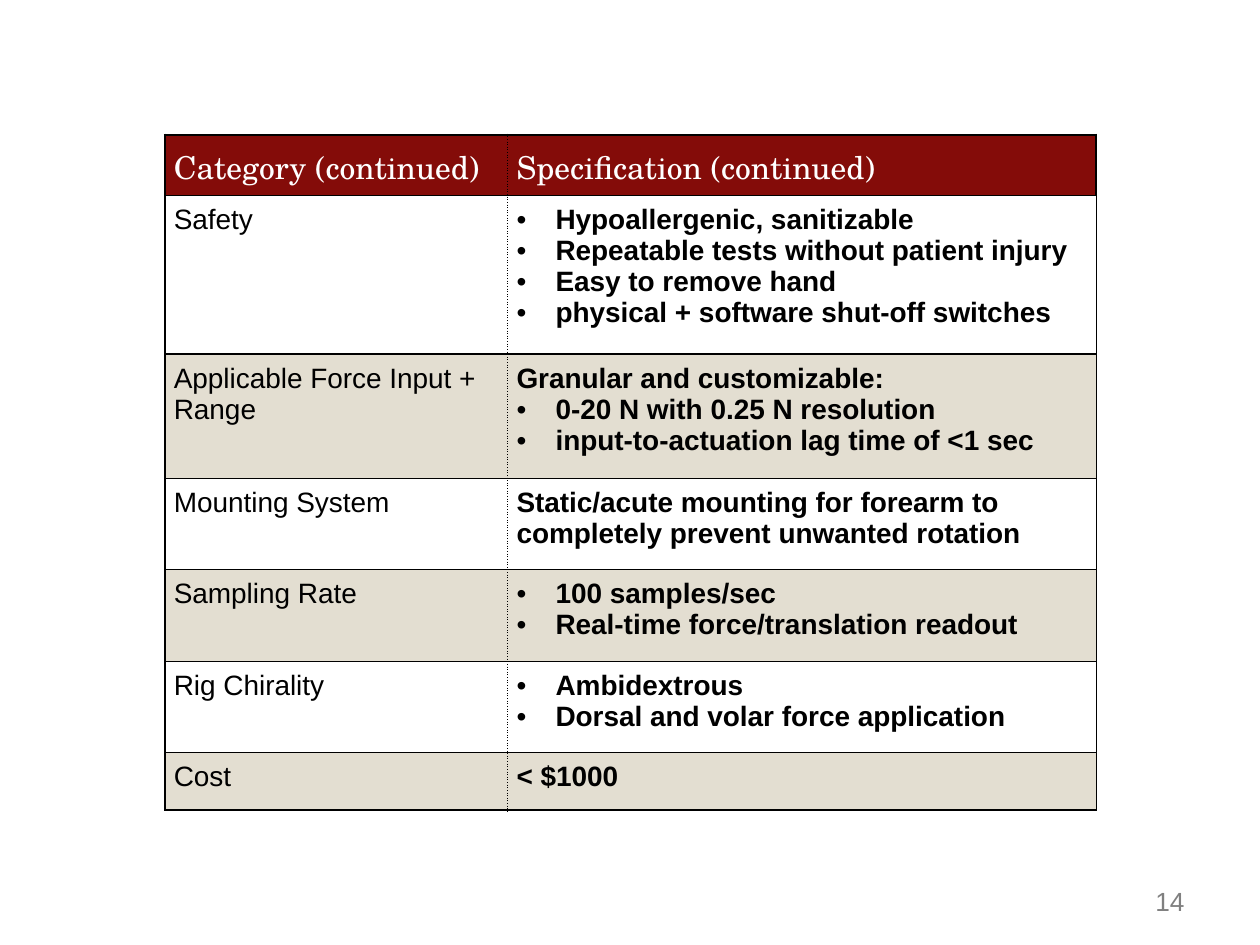
from dataclasses import dataclass

import pptx
import pptx.dml.color
import pptx.enum.text
import pptx.oxml
import pptx.oxml.ns
import pptx.util
from pptx.util import Inches

COLORS = {
    "header": "840C09",
    "band": "E3DED1",
    "line": "000000",
    "text": "000000",
    "header_text": "FFFFFF",
    "page_number": "808080",
}
BODY_FONT = "Arial"
HEADER_FONT = "TeX Gyre Schola"
COLUMN_WIDTHS = (2.72, 4.67)
THIN, THICK = 0.75, 1.5
CELL_MARGIN = 0.07
BULLET_INDENT = 0.31


@dataclass
class SpecificationRow:
    category: str
    height: float
    bullets: tuple[str, ...] = ()
    lead: str = ""


@dataclass
class TextStyle:
    font: str
    size: float
    color: str
    bold: bool = False


HEADER_STYLE = TextStyle(HEADER_FONT, 18, "header_text")
CATEGORY_STYLE = TextStyle(BODY_FONT, 16, "text")
SPECIFICATION_STYLE = TextStyle(BODY_FONT, 16, "text", bold=True)
PAGE_NUMBER_STYLE = TextStyle(BODY_FONT, 15, "page_number")

HEADER = SpecificationRow("Category (continued)", 0.48, lead="Specification (continued)")
ROWS = [
    SpecificationRow("Safety", 1.26, (
        "Hypoallergenic, sanitizable",
        "Repeatable tests without patient injury",
        "Easy to remove hand",
        "physical + software shut-off switches",
    )),
    SpecificationRow("Applicable Force Input + Range", 0.99, (
        "0-20 N with 0.25 N resolution",
        "input-to-actuation lag time of <1 sec",
    ), lead="Granular and customizable:"),
    SpecificationRow("Mounting System", 0.72, lead=(
        "Static/acute mounting for forearm to completely prevent unwanted rotation")),
    SpecificationRow("Sampling Rate", 0.73, (
        "100 samples/sec",
        "Real-time force/translation readout",
    )),
    SpecificationRow("Rig Chirality", 0.72, (
        "Ambidextrous",
        "Dorsal and volar force application",
    )),
    SpecificationRow("Cost", 0.46, lead="< $1000"),
]


def rgb(name: str) -> pptx.dml.color.RGBColor:
    return pptx.dml.color.RGBColor.from_string(COLORS[name])


def style_paragraph(paragraph, style: TextStyle) -> None:
    for run in paragraph.runs:
        run.font.name = style.font
        run.font.size = pptx.util.Pt(style.size)
        run.font.bold = style.bold
        run.font.color.rgb = rgb(style.color)


def add_bullet(paragraph) -> None:
    properties = paragraph._p.get_or_add_pPr()
    properties.set("marL", str(Inches(BULLET_INDENT)))
    properties.set("indent", str(-Inches(BULLET_INDENT)))
    namespace = pptx.oxml.ns.nsdecls("a")
    for xml in (f'<a:buFont {namespace} typeface="{BODY_FONT}"/>',
                f'<a:buChar {namespace} char="•"/>'):
        properties.append(pptx.oxml.parse_xml(xml))


def add_border(cell, side: str, width: float, dash: str = "solid") -> None:
    """Draw one side (L, R, T or B); sides must be added in that order."""
    cell._tc.get_or_add_tcPr().append(pptx.oxml.parse_xml(
        f'<a:ln{side} {pptx.oxml.ns.nsdecls("a")} w="{pptx.util.Pt(width)}">'
        f'<a:solidFill><a:srgbClr val="{COLORS["line"]}"/></a:solidFill>'
        f'<a:prstDash val="{dash}"/></a:ln{side}>'))


def format_cell(cell, row: int, column: int) -> None:
    cell.margin_left = cell.margin_right = Inches(CELL_MARGIN)
    cell.margin_top = cell.margin_bottom = Inches(CELL_MARGIN)
    outer = THICK if row == 0 else THIN
    if column == 0:
        add_border(cell, "L", outer)
        add_border(cell, "R", THIN, "sysDot")
    else:
        add_border(cell, "L", THIN, "sysDot")
        add_border(cell, "R", outer)
    add_border(cell, "T", outer)
    add_border(cell, "B", THICK if row == len(ROWS) else THIN)
    if row % 2:
        cell.fill.background()
    else:
        cell.fill.solid()
        cell.fill.fore_color.rgb = rgb("band" if row else "header")


def fill_cell(cell, lead: str, bullets: tuple[str, ...], style: TextStyle) -> None:
    lines = ([lead] if lead else []) + list(bullets)
    cell.text_frame.text = "\n".join(lines)
    for index, paragraph in enumerate(cell.text_frame.paragraphs):
        if index >= len(lines) - len(bullets):
            add_bullet(paragraph)
        style_paragraph(paragraph, style)


def add_specification_table(slide) -> None:
    rows = [HEADER, *ROWS]
    table = slide.shapes.add_table(
        len(rows), len(COLUMN_WIDTHS), Inches(1.31), Inches(1.07),
        Inches(sum(COLUMN_WIDTHS)), Inches(sum(row.height for row in rows))).table
    table.first_row = table.horz_banding = False
    for column, width in zip(table.columns, COLUMN_WIDTHS):
        column.width = Inches(width)
    for index, row in enumerate(rows):
        table.rows[index].height = Inches(row.height)
        category, specification = table.rows[index].cells
        fill_cell(category, row.category, (), CATEGORY_STYLE if index else HEADER_STYLE)
        fill_cell(specification, row.lead, row.bullets,
                  SPECIFICATION_STYLE if index else HEADER_STYLE)
        format_cell(category, index, 0)
        format_cell(specification, index, 1)


def add_page_number(slide, number: int) -> None:
    shape = slide.shapes.add_textbox(Inches(7.06), Inches(6.95), Inches(2.44), Inches(0.4))
    text_frame = shape.text_frame
    text_frame.word_wrap = True
    text_frame.vertical_anchor = pptx.enum.text.MSO_ANCHOR.MIDDLE
    text_frame.text = str(number)
    paragraph = text_frame.paragraphs[0]
    paragraph.alignment = pptx.enum.text.PP_ALIGN.RIGHT
    style_paragraph(paragraph, PAGE_NUMBER_STYLE)


def main() -> None:
    presentation = pptx.Presentation()
    presentation.slide_width = Inches(10)
    presentation.slide_height = Inches(7.5)
    slide = presentation.slides.add_slide(presentation.slide_layouts.get_by_name("Blank"))
    add_page_number(slide, 14)
    add_specification_table(slide)
    presentation.save("out.pptx")


if __name__ == "__main__":
    main()
